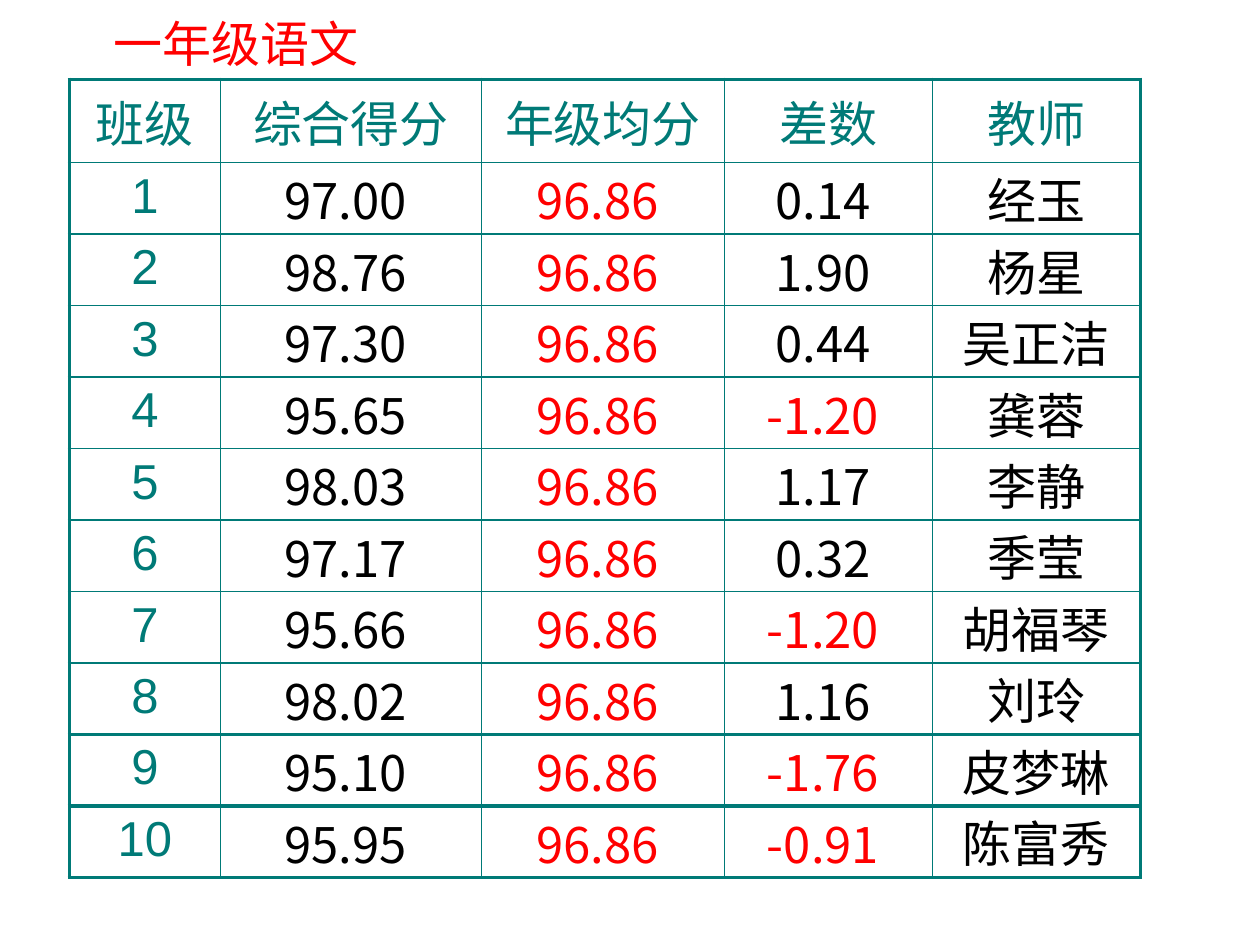
"""Build the grade-one Chinese score table slide."""
from lxml.etree import SubElement
from pptx import Presentation
from pptx.dml.color import RGBColor
from pptx.enum.text import MSO_ANCHOR, MSO_AUTO_SIZE, PP_ALIGN
from pptx.oxml.ns import qn
from pptx.util import Inches, Pt

TITLE = "一年级语文"
HEADS = ["班级", "综合得分", "年级均分", "差数", "教师"]
MEAN = "96.86"
SCORES = [
    ("97.00", "0.14", "经玉"),
    ("98.76", "1.90", "杨星"),
    ("97.30", "0.44", "吴正洁"),
    ("95.65", "-1.20", "龚蓉"),
    ("98.03", "1.17", "李静"),
    ("97.17", "0.32", "季莹"),
    ("95.66", "-1.20", "胡福琴"),
    ("98.02", "1.16", "刘玲"),
    ("95.10", "-1.76", "皮梦琳"),
    ("95.95", "-0.91", "陈富秀"),
]
WIDTHS = [1.2, 2.07, 1.93, 1.65, 1.65]
HEIGHT = 6.23
HEAD_HEIGHT = 0.66
THICK_ROWS = {0, 9, 10, 11}
THICK_COLS = {0, 5}

TEAL = RGBColor(0x00, 0x7A, 0x77)
RED = RGBColor(0xFF, 0x00, 0x00)
BLACK = RGBColor(0x00, 0x00, 0x00)
LATIN, HAN = "Arial", "Noto Sans CJK SC"

FLAT = dict.fromkeys(
    ("margin_left", "margin_top", "margin_right", "margin_bottom"), 0)
LABEL = {"vertical_anchor": MSO_ANCHOR.TOP}
NUMBER = {"vertical_anchor": MSO_ANCHOR.BOTTOM, **FLAT}
PERSON = {"vertical_anchor": MSO_ANCHOR.MIDDLE, **FLAT}
TITLE_BOX = {"left": Inches(-0.73), "top": Inches(0.06),
             "width": Inches(5.21), "height": Inches(0.57)}
TITLE_FRAME = {"vertical_anchor": MSO_ANCHOR.TOP, "word_wrap": True,
               "auto_size": MSO_AUTO_SIZE.SHAPE_TO_FIT_TEXT}


def apply(obj, values):
    for name, value in values.items():
        setattr(obj, name, value)


def write(frame, text, face, color):
    para = frame.paragraphs[0]
    para.alignment = PP_ALIGN.CENTER
    run = para.add_run()
    run.text = text
    apply(run.font, {"name": face, "size": Pt(28), "bold": False})
    run.font.color.rgb = color
    SubElement(run.font._element, qn("a:ea"), typeface=HAN)


def border(cell, row, col):
    props = cell._tc.get_or_add_tcPr()
    sides = {"L": col in THICK_COLS, "R": col + 1 in THICK_COLS,
             "T": row in THICK_ROWS, "B": row + 1 in THICK_ROWS}
    for side, thick in sides.items():
        line = SubElement(props, qn(f"a:ln{side}"),
                          w=str(Pt(2.25 if thick else 1)))
        fill = SubElement(line, qn("a:solidFill"))
        SubElement(fill, qn("a:srgbClr"), val=str(TEAL))
    cell.fill.background()


def look(row, col, text):
    if row == 0 or col == 0:
        return LABEL, LATIN, TEAL
    if col == 4:
        return PERSON, HAN, BLACK
    red = col == 2 or text.startswith("-")
    return NUMBER, HAN, RED if red else BLACK


def add_scores(slide):
    rows = [HEADS] + [
        (str(num), f"{score} ", f"{MEAN} ", f"{gap} ", name)
        for num, (score, gap, name) in enumerate(SCORES, 1)]
    table = slide.shapes.add_table(
        len(rows), len(HEADS), Inches(0.55), Inches(0.63),
        Inches(sum(WIDTHS)), Inches(HEIGHT)).table
    apply(table, {"first_row": False, "horz_banding": False})
    table.rows[0].height = Inches(HEAD_HEIGHT)
    for column, width in zip(table.columns, WIDTHS):
        column.width = Inches(width)
    for row, texts in enumerate(rows):
        for col, text in enumerate(texts):
            cell = table.cell(row, col)
            style, face, color = look(row, col, text)
            apply(cell, style)
            write(cell.text_frame, text, face, color)
            border(cell, row, col)


def main():
    deck = Presentation()
    apply(deck, {"slide_width": Inches(10), "slide_height": Inches(7.5)})
    slide = deck.slides.add_slide(deck.slide_layouts[5])
    add_scores(slide)
    title = slide.shapes.title
    apply(title, TITLE_BOX)
    apply(title.text_frame, TITLE_FRAME)
    write(title.text_frame, TITLE, LATIN, RED)
    deck.save("out.pptx")


if __name__ == "__main__":
    main()
